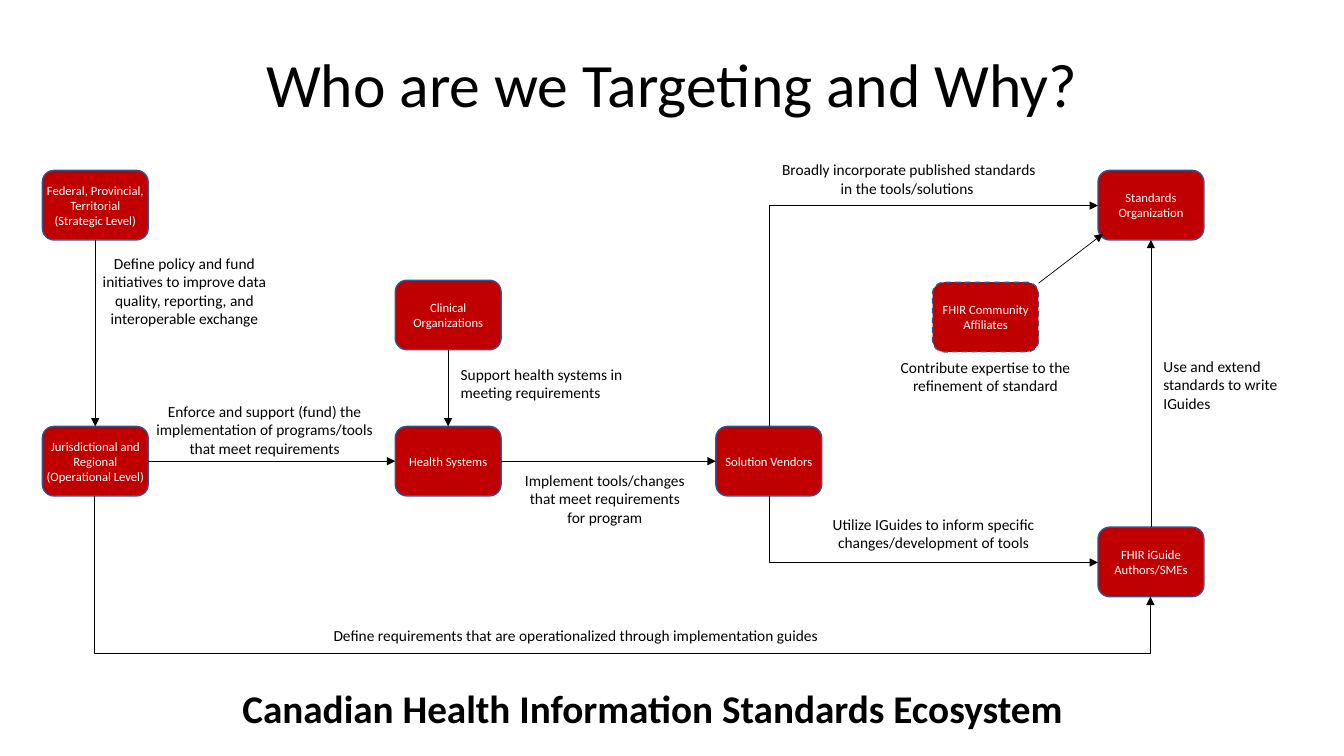
from lxml.etree import SubElement
from pptx import Presentation
from pptx.dml.color import RGBColor
from pptx.enum.dml import MSO_LINE
from pptx.enum.shapes import MSO_CONNECTOR, MSO_SHAPE
from pptx.enum.text import MSO_ANCHOR, MSO_AUTO_SIZE, PP_ALIGN
from pptx.oxml.ns import qn
from pptx.util import Inches, Pt

TOP, LEFT, BOTTOM, RIGHT = range(4)
BOX_WIDTH, BOX_HEIGHT = 1.05, 0.69


def colour(code):
    return RGBColor.from_string(code)


class Diagram:
    font = "Calibri"
    ink = "000000"
    fill = "C00000"
    outline = "325491"

    def __init__(self, page):
        self.page = page

    def add_text(self, frame, text, size, code, align, bold=False):
        frame.word_wrap = True
        para = frame.paragraphs[0]
        para.alignment = align
        span = para.add_run()
        span.text = text
        span.font.name = self.font
        span.font.size = Pt(size)
        span.font.bold = bold
        span.font.color.rgb = colour(code)
        return para

    def title(self, text):
        title = self.page.shapes.title
        title.left, title.top = Inches(0), Inches(0.14)
        title.width, title.height = Inches(13.33), Inches(1.45)
        frame = title.text_frame
        frame.auto_size = MSO_AUTO_SIZE.NONE
        frame.vertical_anchor = MSO_ANCHOR.MIDDLE
        para = self.add_text(frame, text, 44, self.ink, PP_ALIGN.CENTER)
        para.line_spacing = 0.9

    def box(self, text, left, top, dashed=False):
        box = self.page.shapes.add_shape(
            MSO_SHAPE.ROUNDED_RECTANGLE, Inches(left), Inches(top),
            Inches(BOX_WIDTH), Inches(BOX_HEIGHT))
        box.shadow.inherit = False
        box.fill.solid()
        box.fill.fore_color.rgb = colour(self.fill)
        box.line.color.rgb = colour(self.outline)
        box.line.width = Pt(1)
        if dashed:
            box.line.dash_style = MSO_LINE.DASH
        frame = box.text_frame
        frame.margin_left = frame.margin_right = 0
        frame.vertical_anchor = MSO_ANCHOR.MIDDLE
        self.add_text(frame, text, 9, "FFFFFF", PP_ALIGN.CENTER)
        return box

    def label(self, text, left, top, width, height,
              align=PP_ALIGN.CENTER, size=11, bold=False):
        box = self.page.shapes.add_textbox(
            Inches(left), Inches(top), Inches(width), Inches(height))
        self.add_text(box.text_frame, text, size, self.ink, align, bold)
        box.text_frame.auto_size = MSO_AUTO_SIZE.SHAPE_TO_FIT_TEXT

    def arrow(self, kind, start, end):
        arrow = self.page.shapes.add_connector(kind, *start, *end)
        arrow.line.color.rgb = colour(self.ink)
        arrow.line.width = Pt(0.5)
        properties = arrow._element.spPr
        SubElement(properties.find(qn("a:ln")), qn("a:tailEnd"), type="triangle")
        SubElement(properties, qn("a:effectLst"))
        return arrow

    def link(self, source, source_site, target, target_site,
             kind=MSO_CONNECTOR.STRAIGHT):
        arrow = self.arrow(kind, (0, 0), (0, 0))
        arrow.begin_connect(source, source_site)
        arrow.end_connect(target, target_site)

    def turn(self, start, end, preset, bend=None):
        (x1, y1), (x2, y2) = start, end
        middle_x, middle_y = (x1 + x2) / 2, (y1 + y2) / 2
        half_width, half_height = abs(y2 - y1) / 2, abs(x2 - x1) / 2
        rise = 1 if y2 < y1 else -1
        arrow = self.arrow(
            MSO_CONNECTOR.ELBOW,
            (Inches(middle_x + half_width), Inches(middle_y + rise * half_height)),
            (Inches(middle_x - half_width), Inches(middle_y - rise * half_height)))
        properties = arrow._element.spPr
        degrees = 90 if rise > 0 else 270
        properties.find(qn("a:xfrm")).set("rot", str(degrees * 60000))
        geometry = properties.find(qn("a:prstGeom"))
        geometry.set("prst", preset)
        if bend:
            SubElement(geometry.find(qn("a:avLst")), qn("a:gd"),
                       name="adj1", fmla=f"val {round(bend * 100000)}")


def main():
    deck = Presentation()
    deck.slide_width, deck.slide_height = Inches(13.33), Inches(7.5)
    diagram = Diagram(deck.slides.add_slide(deck.slide_layouts[5]))
    diagram.title("Who are we Targeting and Why?")

    vendors = diagram.box("Solution Vendors", 7.1, 4.23)
    standards = diagram.box("Standards Organization", 10.89, 1.69)
    authors = diagram.box("FHIR iGuide Authors/SMEs", 10.89, 5.23)
    systems = diagram.box("Health Systems", 3.92, 4.23)
    regional = diagram.box("Jurisdictional and Regional (Operational Level)", 0.42, 4.23)
    diagram.box("FHIR Community Affiliates", 9.25, 2.8, dashed=True)
    clinical = diagram.box("Clinical Organizations", 3.92, 2.78)
    federal = diagram.box("Federal, Provincial, Territorial (Strategic Level)", 0.42, 1.69)

    diagram.link(federal, BOTTOM, regional, TOP)
    diagram.link(clinical, BOTTOM, systems, TOP)
    diagram.link(authors, TOP, standards, BOTTOM)
    diagram.link(regional, RIGHT, systems, LEFT, MSO_CONNECTOR.ELBOW)
    diagram.link(systems, RIGHT, vendors, LEFT, MSO_CONNECTOR.ELBOW)
    diagram.arrow(MSO_CONNECTOR.STRAIGHT,
                  (Inches(10.3), Inches(2.81)), (Inches(10.94), Inches(2.32)))
    diagram.turn((7.63, 4.23), (10.89, 2.04), "bentConnector2")
    diagram.turn((7.63, 4.92), (10.89, 5.58), "bentConnector2")
    diagram.turn((0.94, 4.92), (11.41, 5.92), "bentConnector3", bend=1.56)

    centred = [
        ("Define policy and fund initiatives to improve data quality, "
         "reporting, and interoperable exchange", 0.81, 2.47, 2.04, 0.84),
        ("Enforce and support (fund) the implementation of programs/tools "
         "that meet requirements", 1.37, 3.94, 2.51, 0.66),
        ("Implement tools/changes that meet requirements for program",
         5.08, 4.62, 1.84, 0.66),
        ("Broadly incorporate published standards in the tools/solutions ",
         7.62, 1.54, 2.79, 0.47),
        ("Utilize IGuides to inform specific changes/development of tools",
         7.63, 5.06, 3.26, 0.47),
        ("Contribute expertise to the refinement of standard",
         8.71, 3.5, 2.13, 0.47),
    ]
    for label in centred:
        diagram.label(*label)

    flush_left = [
        ("Use and extend standards to write IGuides", 11.44, 3.49, 1.58, 0.66),
        ("Define requirements that are operationalized through "
         "implementation guides", 3.21, 6.16, 5.16, 0.29),
        ("Support health systems in meeting requirements", 4.47, 3.57, 1.96, 0.47),
    ]
    for label in flush_left:
        diagram.label(*label, align=PP_ALIGN.LEFT)

    diagram.label("Canadian Health Information Standards Ecosystem",
                  2, 6.74, 8.94, 0.57, size=28, bold=True)
    deck.save("out.pptx")


if __name__ == "__main__":
    main()
